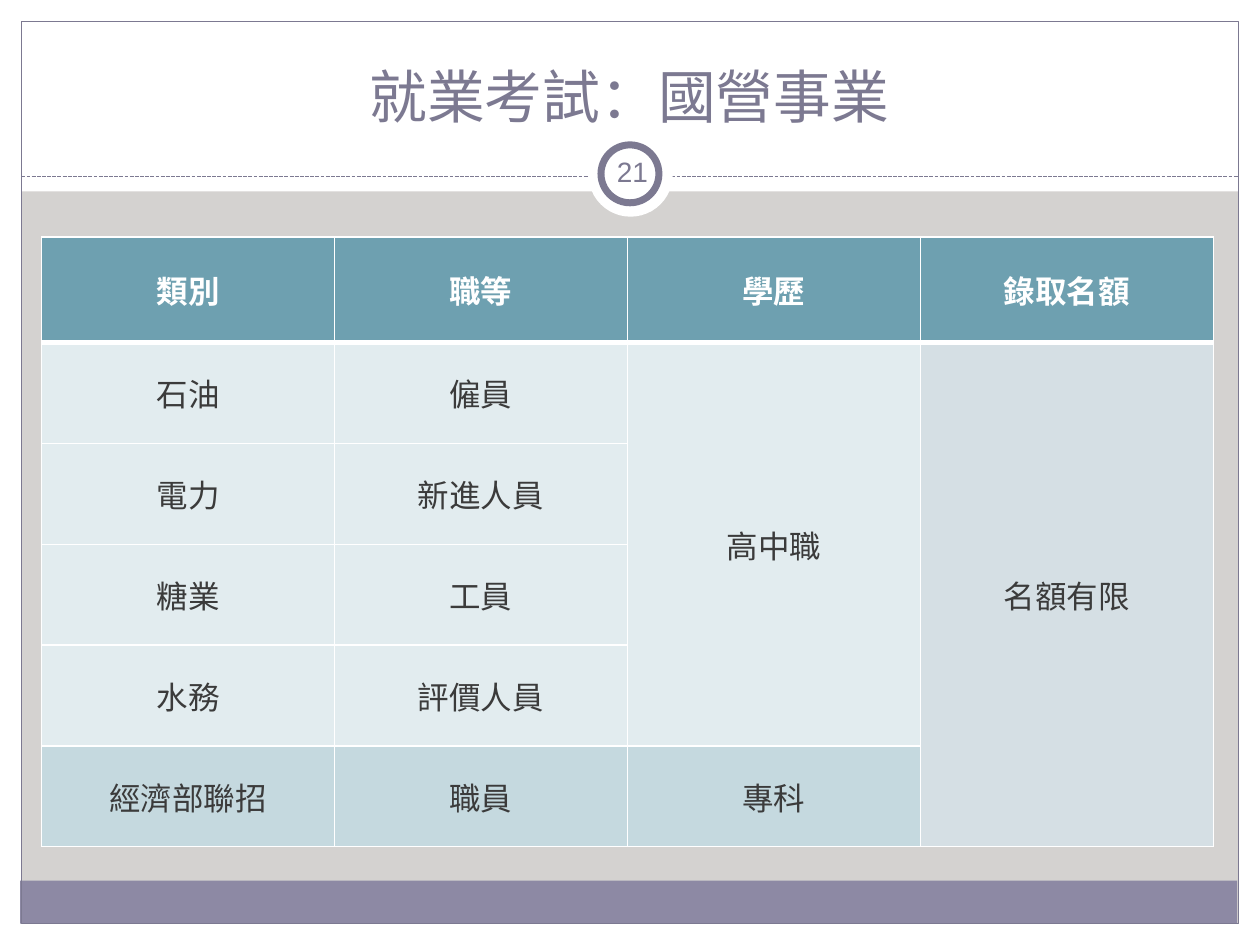
from dataclasses import dataclass

from lxml.etree import SubElement
from pptx import Presentation
from pptx.dml.color import RGBColor
from pptx.enum.dml import MSO_LINE
from pptx.enum.shapes import MSO_CONNECTOR, MSO_SHAPE as Preset
from pptx.enum.text import MSO_ANCHOR as Anchor, PP_ALIGN as Align
from pptx.oxml.ns import qn
from pptx.util import Inches, Pt


@dataclass(frozen=True)
class Theme:
    font: str = "Arial"
    white: str = "FFFFFF"
    background: str = "D4D2D0"
    accent: str = "7C7991"
    footer: str = "8D89A4"
    header: str = "6EA0B0"
    light: str = "E2ECEF"
    quota: str = "D5DFE4"
    last: str = "C5D9DF"
    body: str = "3B3B3B"
    title_size: int = 33
    table_size: int = 18
    number_size: int = 16


class SlideBuilder:
    """Draws styled elements on one slide."""

    def __init__(self, slide, theme):
        self.slide = slide
        self.theme = theme
        fill = slide.background.fill
        fill.solid()
        fill.fore_color.rgb = RGBColor.from_string(theme.background)

    def shape(self, preset, box, fill=None, line=None, width=0.75):
        shape = self.slide.shapes.add_shape(preset, *map(Inches, box))
        shape.shadow.inherit = False
        if fill:
            shape.fill.solid()
            shape.fill.fore_color.rgb = RGBColor.from_string(fill)
        else:
            shape.fill.background()
        if line:
            shape.line.color.rgb = RGBColor.from_string(line)
            shape.line.width = Pt(width)
        else:
            shape.line.fill.background()

    def dashed_line(self, left, right, top):
        line = self.slide.shapes.add_connector(
            MSO_CONNECTOR.STRAIGHT, Inches(left), Inches(top), Inches(right), Inches(top))
        line.line.color.rgb = RGBColor.from_string(self.theme.accent)
        line.line.width = Pt(0.75)
        line.line.dash_style = MSO_LINE.SQUARE_DOT
        SubElement(line._element.spPr, qn("a:effectLst"))

    def add_run(self, frame, text, size, color, bold=False):
        paragraph = frame.paragraphs[0]
        paragraph.alignment = Align.CENTER
        run = paragraph.add_run()
        run.text = text
        run.font.name = self.theme.font
        run.font.size = Pt(size)
        run.font.bold = bold
        run.font.color.rgb = RGBColor.from_string(color)

    def text(self, box, text, size, anchor, margin):
        frame = self.slide.shapes.add_textbox(*map(Inches, box)).text_frame
        frame.word_wrap = True
        frame.vertical_anchor = anchor
        frame.margin_left = frame.margin_right = Inches(margin)
        frame.margin_top = frame.margin_bottom = Inches(0.05)
        self.add_run(frame, text, size, self.theme.accent)

    def borders(self, cell, bottom):
        properties = cell._tc.get_or_add_tcPr()
        widths = {"lnL": 1, "lnR": 1, "lnT": 1, "lnB": bottom}
        for index, (side, width) in enumerate(widths.items()):
            border = SubElement(properties, qn(f"a:{side}"), w=str(Pt(width)))
            fill = SubElement(border, qn("a:solidFill"))
            SubElement(fill, qn("a:srgbClr"), val=self.theme.white)
            properties.insert(index, border)

    def cell_fill(self, row, column, last_row):
        if row == 0:
            return self.theme.header
        if column == 3:
            return self.theme.quota
        return self.theme.last if row == last_row else self.theme.light

    def table(self, box, rows, heights, merges):
        theme = self.theme
        table = self.slide.shapes.add_table(
            len(rows), len(rows[0]), *map(Inches, box)).table
        table.first_row = table.horz_banding = False
        for row, height in zip(table.rows, heights):
            row.height = Inches(height)
        for top, bottom, column in merges:
            table.cell(top, column).merge(table.cell(bottom, column))
        for r, row in enumerate(rows):
            for c, text in enumerate(row):
                cell = table.cell(r, c)
                cell.fill.solid()
                cell.fill.fore_color.rgb = RGBColor.from_string(
                    self.cell_fill(r, c, len(rows) - 1))
                self.borders(cell, 1 if r else 3)
                cell.vertical_anchor = Anchor.MIDDLE
                if r and c == 0:
                    cell.margin_left = cell.margin_right = Inches(0.07)
                    cell.margin_top = cell.margin_bottom = 0
                if text:
                    color = theme.body if r else theme.white
                    self.add_run(cell.text_frame, text, theme.table_size, color, r == 0)


def main():
    theme = Theme()
    presentation = Presentation()
    presentation.slide_width, presentation.slide_height = Inches(10), Inches(7.5)
    slide = presentation.slides.add_slide(presentation.slide_layouts[6])
    builder = SlideBuilder(slide, theme)

    margins = [(0, 7.33, 10, 0.17), (0, 0, 10, 1.52), (0, 0, 0.17, 7.5), (9.83, 0, 0.17, 7.5)]
    for box in margins:
        builder.shape(Preset.RECTANGLE, box, theme.white)
    builder.shape(Preset.RECTANGLE, (0.16, 6.99, 9.66, 0.34), theme.footer)
    builder.shape(Preset.RECTANGLE, (0.17, 0.17, 9.66, 7.16), line=theme.accent)
    builder.dashed_line(0.17, 9.83, 1.4)
    builder.shape(Preset.OVAL, (4.67, 1.05, 0.67, 0.67), theme.white)
    builder.shape(Preset.OVAL, (4.77, 1.15, 0.46, 0.46), theme.white, theme.accent, 4)

    builder.text((0.33, 0.25, 9.33, 0.83), "就業考試：國營事業",
                 theme.title_size, Anchor.BOTTOM, 0.1)
    rows = [
        ("類別", "職等", "學歷", "錄取名額"),
        ("石油", "僱員", "高中職", "名額有限"),
        ("電力", "新進人員", "", ""),
        ("糖業", "工員", "", ""),
        ("水務", "評價人員", "", ""),
        ("經濟部聯招", "職員", "專科", ""),
    ]
    builder.table((0.33, 1.88, 9.3, 4.84), rows, [0.84] + [0.8] * 5,
                  merges=[(1, 4, 2), (1, 5, 3)])
    builder.text((4.77, 1.12, 0.5, 0.48), "21", theme.number_size, Anchor.MIDDLE, 0.05)

    presentation.save("out.pptx")


if __name__ == "__main__":
    main()
